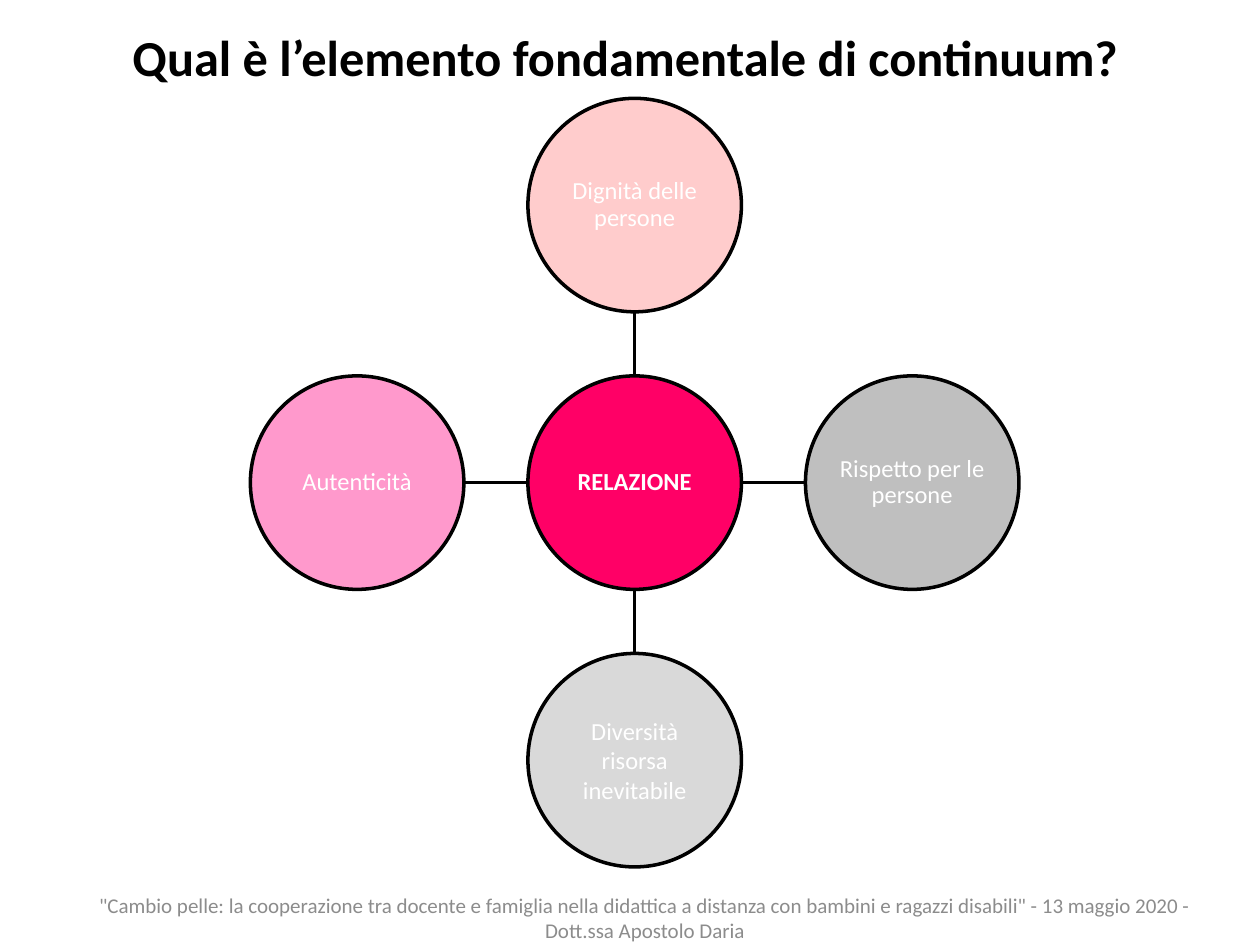
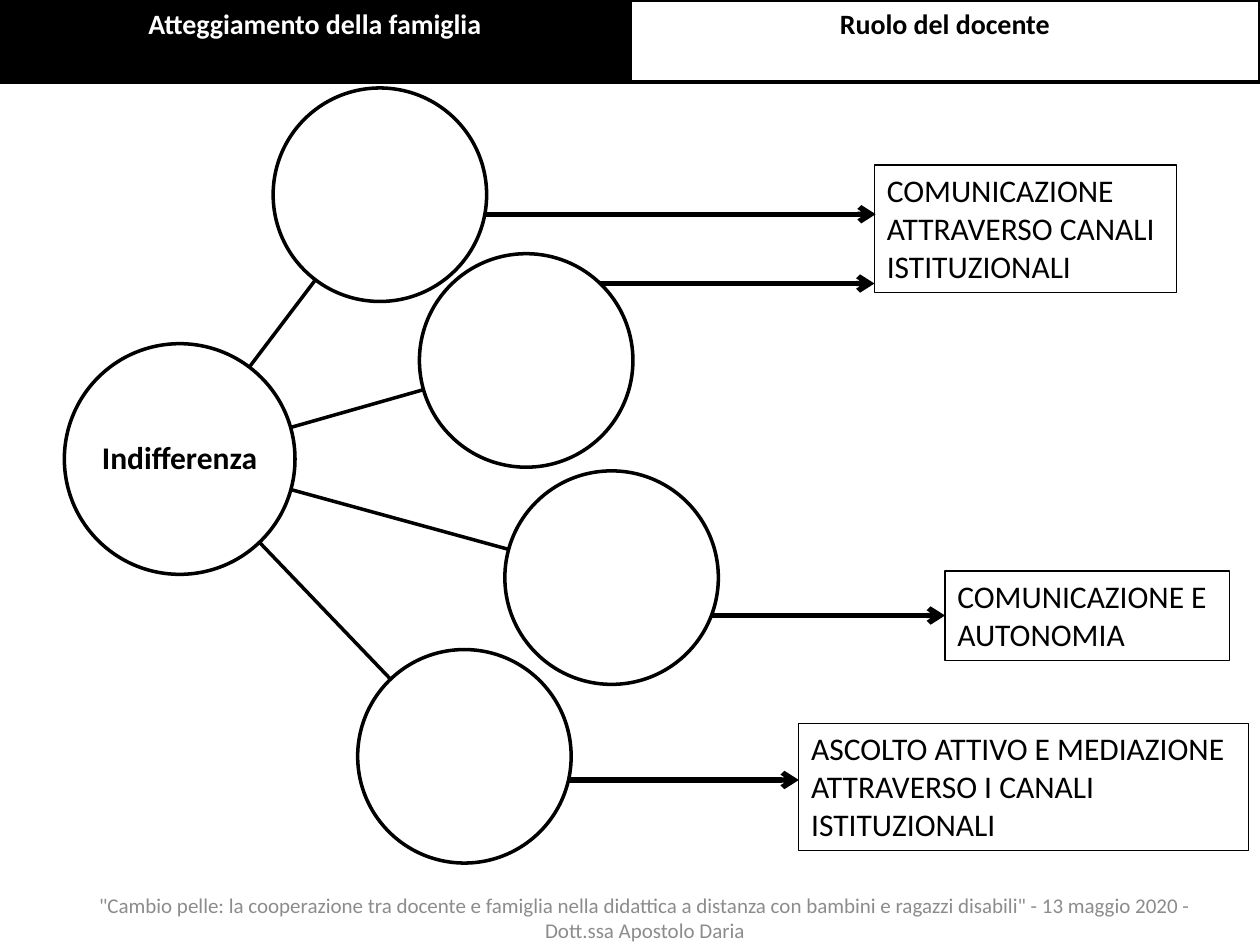
import math

import pptx
import pptx.dml.color
import pptx.enum.shapes
import pptx.enum.text
import pptx.oxml.ns
import pptx.util
from lxml import etree

Pt = pptx.util.Pt
ALIGN = pptx.enum.text.PP_ALIGN
ANCHOR = pptx.enum.text.MSO_ANCHOR
SHAPE = pptx.enum.shapes.MSO_SHAPE

COLORS = {
    "black": "000000",
    "white": "FFFFFF",
    "footer": "8C8C8C",
    "magenta": "FF0066",
    "blush": "FFCCCC",
    "pink": "FF99CC",
    "gray": "BFBFBF",
    "light_gray": "D9D9D9",
}
FONT = "Calibri"
FOOTER = (
    '"Cambio pelle: la cooperazione tra docente e famiglia nella didattica a distanza '
    'con bambini e ragazzi disabili" - 13 maggio 2020 - Dott.ssa Apostolo Daria'
)
DIAMETER = 122
HUB_DIAMETER = 131.8


def rgb(name):
    return pptx.dml.color.RGBColor.from_string(COLORS[name])


class Deck:
    def __init__(self):
        self.presentation = pptx.Presentation()
        self.presentation.slide_width = Pt(720)
        self.presentation.slide_height = Pt(540)
        self.slide = None

    def new_slide(self):
        self.slide = self.presentation.slides.add_slide(self.presentation.slide_layouts[6])
        self.text_box(48.2, 508.3, 640.8, 31.7, FOOTER, size=12, color="footer")

    def set_text(self, shape, lines, size, color="black", bold=False,
                 align=ALIGN.CENTER, anchor=ANCHOR.MIDDLE, spacing=None):
        frame = shape.text_frame
        frame.word_wrap = True
        frame.vertical_anchor = anchor
        frame.text = lines
        for paragraph in frame.paragraphs:
            paragraph.alignment = align
            if spacing:
                paragraph.line_spacing = spacing
            paragraph.font.name = FONT
            paragraph.font.size = Pt(size)
            paragraph.font.bold = bold
            paragraph.font.color.rgb = rgb(color)
        return frame

    def text_box(self, left, top, width, height, text, **style):
        box = self.slide.shapes.add_textbox(Pt(left), Pt(top), Pt(width), Pt(height))
        self.set_text(box, text, **style)

    def outlined(self, kind, left, top, width, height, fill=None, weight=2):
        """Draw a black-edged shape, hollow when no fill is named."""
        shape = self.slide.shapes.add_shape(kind, Pt(left), Pt(top), Pt(width), Pt(height))
        shape.shadow.inherit = False
        if fill:
            shape.fill.solid()
            shape.fill.fore_color.rgb = rgb(fill)
        else:
            shape.fill.background()
        shape.line.color.rgb = rgb("black")
        shape.line.width = Pt(weight)
        return shape

    def circle(self, center, fill, text="", diameter=DIAMETER, **style):
        x, y = center
        shape = self.outlined(SHAPE.OVAL, x - diameter / 2, y - diameter / 2,
                              diameter, diameter, fill)
        if text:
            frame = self.set_text(shape, text, **style)
            frame.margin_left = frame.margin_right = Pt(0.7)
            frame.margin_top = frame.margin_bottom = Pt(0.7)

    def header(self, left, text, fill, color):
        shape = self.outlined(SHAPE.RECTANGLE, left, 0, 360, 46.8, fill)
        self.set_text(shape, text, size=16, color=color, bold=True, anchor=ANCHOR.TOP)

    def role_box(self, left, top, width, height, text):
        shape = self.outlined(SHAPE.RECTANGLE, left, top, width, height, weight=0.75)
        frame = self.set_text(shape, text, size=18, align=ALIGN.LEFT, anchor=ANCHOR.TOP)
        frame.word_wrap = False
        frame.auto_size = pptx.enum.text.MSO_AUTO_SIZE.SHAPE_TO_FIT_TEXT
        return shape

    def line(self, start, end, weight=2, arrow=False):
        connector = self.slide.shapes.add_connector(
            pptx.enum.shapes.MSO_CONNECTOR.STRAIGHT, *map(Pt, (*start, *end)))
        connector.line.color.rgb = rgb("black")
        connector.line.width = Pt(weight)
        properties = connector.element.spPr
        qn = pptx.oxml.ns.qn
        if arrow:
            etree.SubElement(properties.find(qn("a:ln")), qn("a:tailEnd"), type="arrow")
        etree.SubElement(properties, qn("a:effectLst"))
        return connector

    def spoke(self, hub, satellite, hub_diameter=DIAMETER):
        """Join two circles from edge to edge along the line of their centres."""
        distance = math.dist(hub, satellite)

        def along(length):
            return tuple(a + (b - a) * length / distance for a, b in zip(hub, satellite))

        self.line(along(hub_diameter / 2), along(distance - DIAMETER / 2))


def build_relationship(deck):
    deck.new_slide()
    deck.text_box(36.7, 9.4, 648, 45.4, "Qual è l’elemento fondamentale di continuum? ",
                  size=28.8, bold=True)
    hub = (362.7, 275.8)
    reach = 158.6
    values = [
        (0, -1, "blush", "Dignità delle persone", 0.9),
        (1, 0, "gray", "Rispetto per le persone", 0.9),
        (0, 1, "light_gray", "Diversità risorsa inevitabile", None),
        (-1, 0, "pink", "Autenticità", 0.9),
    ]
    deck.circle(hub, "magenta", "RELAZIONE", size=14, color="white", bold=True, spacing=0.9)
    for across, down, fill, text, spacing in values:
        center = (hub[0] + across * reach, hub[1] + down * reach)
        deck.spoke(hub, center)
        deck.circle(center, fill, text, size=14, color="white", spacing=spacing)


def build_indifference(deck):
    deck.new_slide()
    institutional = (499.7, 94.3, 172.8, 72.7,
                     "COMUNICAZIONE\nATTRAVERSO CANALI\nISTITUZIONALI")
    autonomy = (540, 326.2, 162.7, 51.1, "COMUNICAZIONE E\nAUTONOMIA")
    listening = (456.5, 413.3, 257, 72.7,
                 "ASCOLTO ATTIVO E MEDIAZIONE\nATTRAVERSO I CANALI\nISTITUZIONALI")
    for start_x, y, end_x in [(257.8, 122.4, 500.4), (324, 162, 499.7), (282.2, 445.7, 456.5)]:
        deck.line((start_x, y), (end_x, y), weight=3, arrow=True)
    deck.role_box(*institutional)
    autonomy_box = deck.role_box(*autonomy)
    deck.role_box(*listening)
    deck.header(360, "Ruolo del docente", "white", "black")
    deck.header(0, "Atteggiamento della famiglia", "black", "white")
    middle = autonomy[1] + autonomy[3] / 2
    arrow = deck.line((337.7, middle), (autonomy[0], middle), weight=3, arrow=True)
    arrow.end_connect(autonomy_box, 1)

    hub = (102.7, 262.3)
    deck.circle(hub, "white", "Indifferenza", HUB_DIAMETER, size=18, bold=True, spacing=0.9)
    for center in [(217.1, 111.3), (349.5, 330.1), (265.4, 432.2), (300.7, 206)]:
        deck.spoke(hub, center, HUB_DIAMETER)
        deck.circle(center, "white")


def main():
    deck = Deck()
    build_relationship(deck)
    build_indifference(deck)
    deck.presentation.save("out.pptx")


if __name__ == "__main__":
    main()
